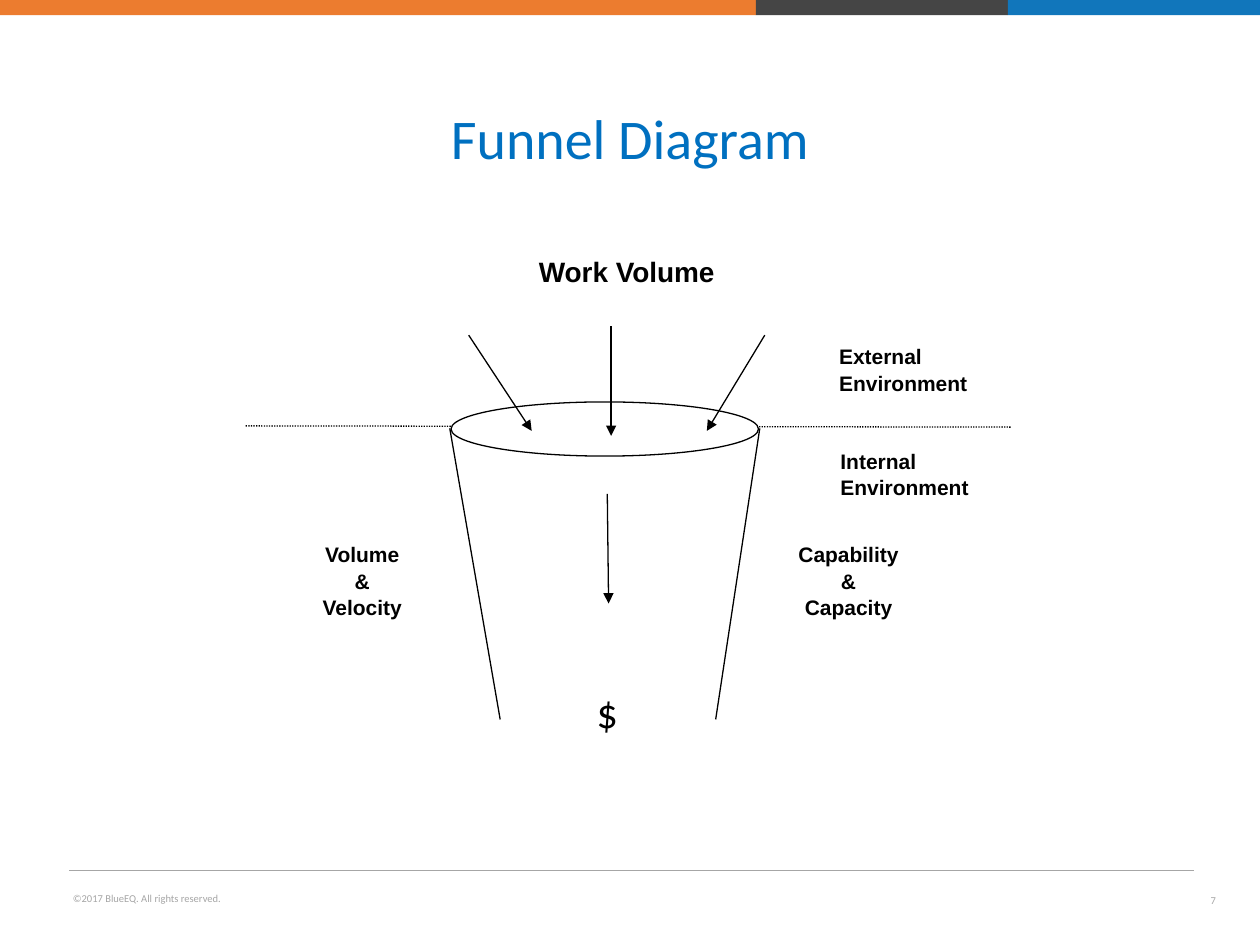
from lxml.etree import SubElement
from pptx import Presentation
from pptx.dml.color import RGBColor
from pptx.enum.dml import MSO_LINE
from pptx.enum.shapes import MSO_CONNECTOR, MSO_SHAPE
from pptx.enum.text import MSO_ANCHOR, PP_ALIGN
from pptx.oxml.ns import qn
from pptx.util import Inches, Pt

# Grid of 100 columns by 75 rows
COLS, ROWS = 100, 75
CELL = Inches(0.1)
BLACK, WHITE, GREY = "000000", "FFFFFF", "A6A6A6"
LEAD = Pt(15.1)


def cells(*spans):
    return [round(span * CELL) for span in spans]


def tint(code):
    return RGBColor.from_string(code)


def shape(slide, kind, area, fill=None, line=None):
    item = slide.shapes.add_shape(kind, *cells(*area))
    item.shadow.inherit = False
    if fill:
        item.fill.solid()
        item.fill.fore_color.rgb = tint(fill)
    else:
        item.fill.background()
    if line:
        item.line.color.rgb = tint(line)
        item.line.width = Pt(0.75)
    else:
        item.line.fill.background()
    return item


def write(item, lines, size, color=BLACK, face="Arial", bold=False,
          align=PP_ALIGN.CENTER, lead=None, anchor=MSO_ANCHOR.TOP, inset=None):
    frame = item.text_frame
    frame.word_wrap = True
    frame.vertical_anchor = anchor
    if inset:
        side, top = cells(*inset)
        frame.margin_left = frame.margin_right = side
        frame.margin_top = frame.margin_bottom = top
    frame.text = "\n".join(lines)
    for para in frame.paragraphs:
        para.alignment = align
        para.line_spacing = lead
        font = para.font
        font.name, font.size, font.bold = face, Pt(size), bold
        font.color.rgb = tint(color)


def text(slide, area, words, size, color, **style):
    box = slide.shapes.add_textbox(*cells(*area))
    write(box, [words], size, color, "Calibri", **style)


def line(slide, start, end, color=BLACK, width=0.75, dash=None, head=False):
    item = slide.shapes.add_connector(
        MSO_CONNECTOR.STRAIGHT, *cells(*start, *end))
    item.line.color.rgb = tint(color)
    item.line.width = Pt(width)
    if dash:
        item.line.dash_style = dash
    props = item.element.spPr
    if head:
        SubElement(props.find(qn("a:ln")), qn("a:tailEnd"), type="triangle")
    SubElement(props, qn("a:effectLst"))


def frame(slide):
    # Footer and top band
    text(slide, (4.8, 70.3, 42.5, 2), "©2017 BlueEQ. All rights reserved.",
         6, GREY, align=PP_ALIGN.LEFT)
    text(slide, (94.1, 70.1, 4.4, 2.7), "7", 6, GREY,
         anchor=MSO_ANCHOR.MIDDLE, inset=(0.8, 0.4))
    line(slide, (5.5, 69.1), (94.8, 69.1), GREY, 0.25)
    left = 0
    for width, color in ((60, "EC7C2F"), (20, "454545"), (20, "1176BB")):
        shape(slide, MSO_SHAPE.RECTANGLE, (left, 0, width, 1.2), color)
        left += width
    # Title
    text(slide, (6.9, 4, 86.2, 14.5), "Funnel Diagram", 32, "0070C0",
         lead=0.9, anchor=MSO_ANCHOR.MIDDLE)


def labels(slide):
    # Labels beside the funnel
    for left, width, lines in (
            (18.2, 21.1, ("Volume", "&", "Velocity")),
            (59, 16.7, ("Capability", "&", "Capacity"))):
        box = shape(slide, MSO_SHAPE.RECTANGLE, (left, 42.4, width, 9.4),
                    line=WHITE)
        write(box, lines, 12, bold=True, lead=LEAD)
    # Labels above and at each side of the border
    for area, words, size, align in (
            ((40.6, 20, 18.3, 4.7), "Work Volume", 16, PP_ALIGN.CENTER),
            ((65.8, 26.4, 16, 6.1), "External Environment", 12, PP_ALIGN.LEFT),
            ((65.9, 34.7, 15.9, 6.2), "Internal Environment", 12,
             PP_ALIGN.LEFT)):
        box = shape(slide, MSO_SHAPE.RECTANGLE, area, WHITE)
        write(box, [words], size, bold=True, align=align, lead=LEAD,
              inset=(0.8, 0.8))
    text(slide, (44.8, 55.6, 6.8, 6.9), "$", 24, BLACK, lead=LEAD,
         inset=(0.8, 0.8))


def funnel(slide):
    # Border between environments, then the mouth over it
    line(slide, (19.5, 33.8), (80.3, 33.9), dash=MSO_LINE.ROUND_DOT)
    shape(slide, MSO_SHAPE.OVAL, (35.8, 31.9, 24.4, 4.3), WHITE, BLACK)
    # Flow arrows: three in, one through
    for start, end in (((37.2, 26.6), (42.2, 34.2)),
                       ((48.5, 25.9), (48.5, 34.6)),
                       ((60.7, 26.6), (56.1, 34.2)),
                       ((48.2, 39.2), (48.3, 47.9))):
        line(slide, start, end, head=True)
    # Walls
    for top, foot in ((35.7, 39.7), (60.3, 56.8)):
        line(slide, (top, 34), (foot, 57.1))


def main():
    deck = Presentation()
    deck.slide_width, deck.slide_height = cells(COLS, ROWS)
    slide = deck.slides.add_slide(deck.slide_layouts[6])
    frame(slide)
    labels(slide)
    funnel(slide)
    deck.save("out.pptx")


if __name__ == "__main__":
    main()
